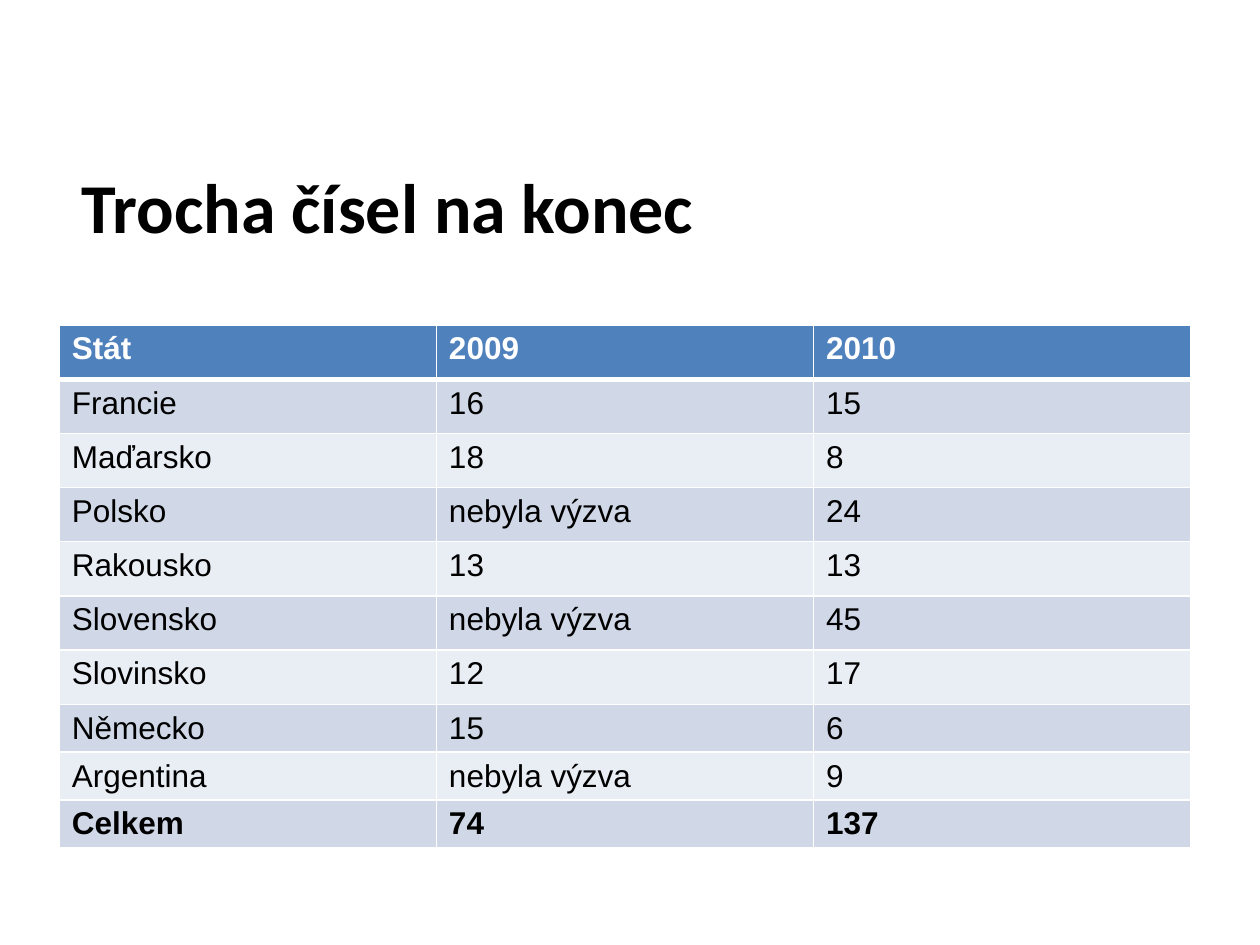
import pptx
import pptx.dml.color
import pptx.enum.text
import pptx.oxml.ns
import pptx.util
from lxml import etree

Inches = pptx.util.Inches
Pt = pptx.util.Pt

COLORS = {
    "text": "000000",
    "white": "FFFFFF",
    "header": "4F81BD",
    "band_dark": "D0D8E8",
    "band_light": "E9EDF4",
}

ROWS = [
    ("Stát", "2009", "2010"),
    ("Francie", "16", "15"),
    ("Maďarsko", "18", "8"),
    ("Polsko", "nebyla výzva", "24"),
    ("Rakousko", "13", "13"),
    ("Slovensko", "nebyla výzva", "45"),
    ("Slovinsko", "12", "17"),
    ("Německo", "15", "6"),
    ("Argentina", "nebyla výzva", "9"),
    ("Celkem", "74", "137"),
]
ROW_HEIGHTS = [0.43] * 7 + [0.36] * 3


def rgb(name):
    return pptx.dml.color.RGBColor.from_string(COLORS[name])


def style_font(font, name, size, color, bold):
    font.name = name
    font.size = Pt(size)
    font.bold = bold
    font.color.rgb = rgb(color)


def add_title(slide, left, top, width, height):
    title = slide.shapes.title
    title.left, title.top = Inches(left), Inches(top)
    title.width, title.height = Inches(width), Inches(height)
    frame = title.text_frame
    frame.text = "Trocha čísel na konec"
    frame.word_wrap = True
    frame.auto_size = pptx.enum.text.MSO_AUTO_SIZE.NONE
    frame.vertical_anchor = pptx.enum.text.MSO_ANCHOR.TOP
    paragraph = frame.paragraphs[0]
    paragraph.alignment = pptx.enum.text.PP_ALIGN.LEFT
    style_font(paragraph.font, "Calibri", 40, "text", True)


def set_borders(cell, widths):
    qn = pptx.oxml.ns.qn
    properties = cell._tc.get_or_add_tcPr()
    for side, width in widths.items():
        line = etree.SubElement(properties, qn(f"a:ln{side}"), w=str(Pt(width)))
        fill = etree.SubElement(line, qn("a:solidFill"))
        etree.SubElement(fill, qn("a:srgbClr"), val=COLORS["white"])


def fill_cell(cell, text, row_index):
    is_header = row_index == 0
    is_total = row_index == len(ROWS) - 1
    band = "band_dark" if row_index % 2 else "band_light"
    set_borders(cell, {
        "L": 1,
        "R": 1,
        "T": 3 if row_index == 1 else 1,
        "B": 3 if is_header else 1,
    })
    cell.fill.solid()
    cell.fill.fore_color.rgb = rgb("header" if is_header else band)
    cell.text = text
    style_font(cell.text_frame.paragraphs[0].font, "Arial", 18,
               "white" if is_header else "text", is_header or is_total)


def add_country_table(slide, left, top, width, height):
    table = slide.shapes.add_table(
        len(ROWS), len(ROWS[0]),
        Inches(left), Inches(top), Inches(width), Inches(height)).table
    for column in table.columns:
        column.width = Inches(width / len(ROWS[0]))
    for row_index, values in enumerate(ROWS):
        table.rows[row_index].height = Inches(ROW_HEIGHTS[row_index])
        for column_index, text in enumerate(values):
            fill_cell(table.cell(row_index, column_index), text, row_index)


def main():
    presentation = pptx.Presentation()
    presentation.slide_width = Inches(10)
    presentation.slide_height = Inches(7.5)
    slide = presentation.slides.add_slide(presentation.slide_layouts[5])
    add_title(slide, 0.55, 1.25, 9, 1.41)
    add_country_table(slide, 0.47, 2.58, 8.98, sum(ROW_HEIGHTS))
    presentation.save("out.pptx")


if __name__ == "__main__":
    main()
